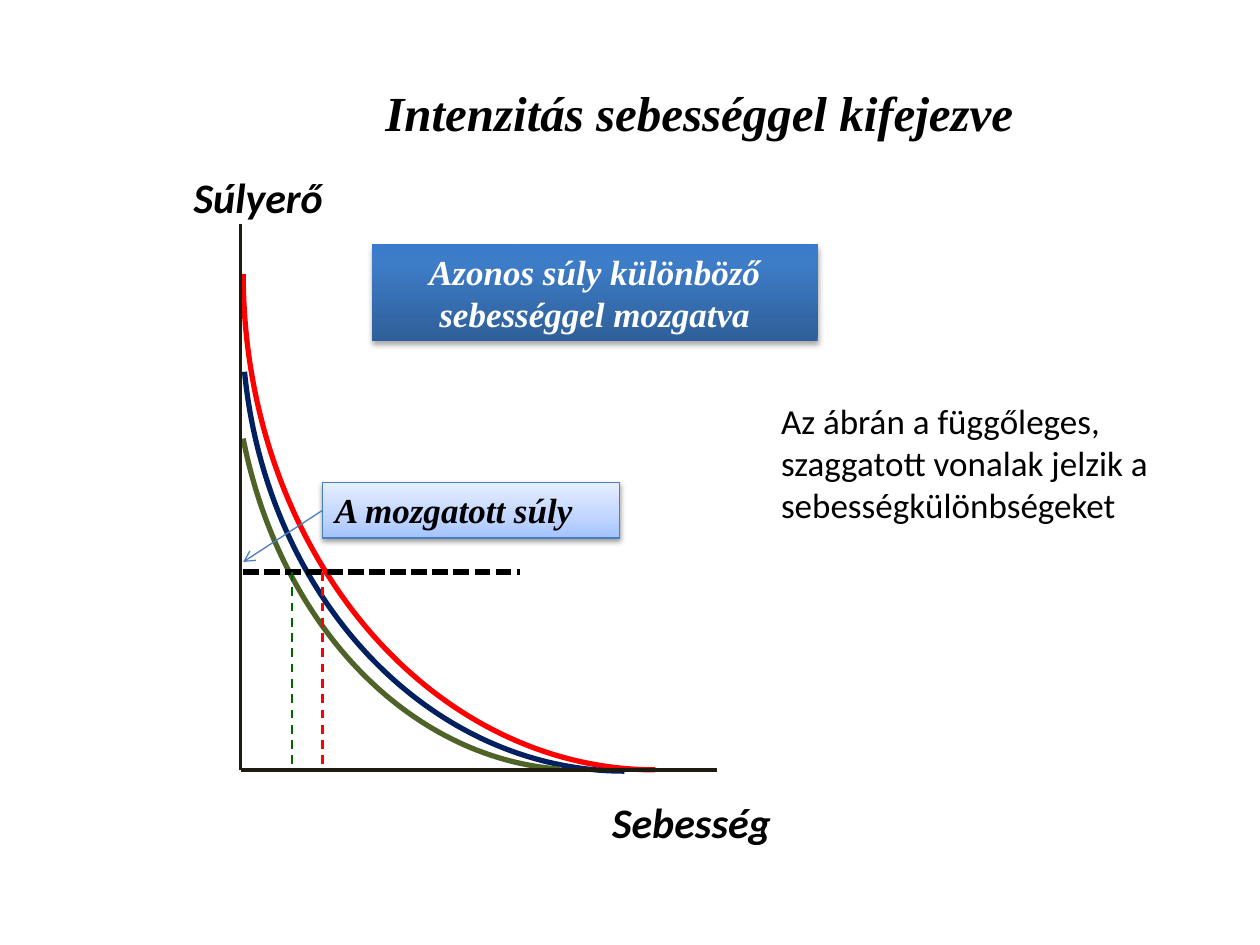
from pptx import Presentation
from pptx.dml.color import RGBColor
from pptx.enum.dml import MSO_LINE_DASH_STYLE as Dash
from pptx.enum.shapes import MSO_CONNECTOR as Connector, MSO_SHAPE as Preset
from pptx.enum.text import MSO_ANCHOR as Anchor, MSO_AUTO_SIZE as AutoSize, PP_ALIGN as Align
from pptx.oxml import parse_xml
from pptx.oxml.ns import nsdecls
from pptx.util import Inches, Pt

COLORS = {
    "black": "000000", "white": "FFFFFF", "red": "FF0000", "navy": "002060",
    "olive": "4F6228", "green": "006600", "axis": "1E1C11", "blue": "4B7EBC",
}
PALE_BLUE = [(0, "A4C4FF"), (35, "BFD4FF"), (100, "E6EEFF")]
DEEP_BLUE = [(0, "2F5F99"), (80, "3D7CC7"), (100, "3A7CCB")]
SERIF, SANS = "Times New Roman", "Calibri"
AXIS_LEFT, AXIS_BOTTOM, WEIGHT_LEVEL = 1.91, 6.11, 4.54


def drawing_xml(tag, content):
    return parse_xml(f'<a:{tag} {nsdecls("a")}{content}')


class SlideBuilder:
    def __init__(self, slide):
        self.slide = slide
        self.shapes = slide.shapes

    def stroke(self, shape, color, width, dash=None):
        shape.line.color.rgb = RGBColor.from_string(COLORS[color])
        shape.line.width = Pt(width)
        if dash:
            shape.line.dash_style = dash

    def set_text(self, shape, text, size, font=SANS, color="black", align=Align.LEFT, emphasis=True):
        frame = shape.text_frame
        frame.word_wrap = True
        frame.auto_size = AutoSize.NONE
        frame.text = text
        para = frame.paragraphs[0]
        para.alignment = align
        para.font.name = font
        para.font.size = Pt(size)
        para.font.bold = para.font.italic = emphasis
        para.font.color.rgb = RGBColor.from_string(COLORS[color])

    def title(self, text, place):
        title = self.shapes.title
        title.left, title.top, title.width, title.height = map(Inches, place)
        self.set_text(title, text, 28, SERIF, align=Align.CENTER)

    def text(self, text, place, size, **style):
        box = self.shapes.add_textbox(*map(Inches, place))
        self.set_text(box, text, size, **style)

    def arc(self, place, color, angles):
        arc = self.shapes.add_shape(Preset.ARC, *map(Inches, place))
        arc.rotation = 180
        arc.adjustments[0], arc.adjustments[1] = angles
        arc.fill.background()
        arc.shadow.inherit = False
        self.stroke(arc, color, 3)

    def line(self, start, end, color, width, dash=None, arrow=False):
        line = self.shapes.add_connector(Connector.STRAIGHT, *map(Inches, start + end))
        self.stroke(line, color, width, dash)
        properties = line._element.spPr
        if arrow:
            properties.get_or_add_ln().append(drawing_xml("tailEnd", ' type="arrow"/>'))
        properties.append(drawing_xml("effectLst", "/>"))
        return line

    def gradient_box(self, text, place, stops, shadow, outline=None, **style):
        box = self.shapes.add_shape(Preset.RECTANGLE, *map(Inches, place))
        if outline:
            self.stroke(box, outline, 0.75)
        else:
            box.line.fill.background()
        stop_list = "".join(
            f'<a:gs pos="{position * 1000}"><a:srgbClr val="{color}"/></a:gs>'
            for position, color in stops
        )
        properties = box._element.spPr
        properties.insert(2, drawing_xml(
            "gradFill", f'><a:gsLst>{stop_list}</a:gsLst><a:lin ang="16200000" scaled="0"/></a:gradFill>'))
        opacity, distance = shadow
        properties.append(drawing_xml(
            "effectLst",
            f'><a:outerShdw blurRad="{int(Pt(3.1))}" dist="{int(Pt(distance))}" dir="5400000" rotWithShape="0">'
            f'<a:srgbClr val="{COLORS["black"]}"><a:alpha val="{opacity * 1000}"/></a:srgbClr>'
            '</a:outerShdw></a:effectLst>'))
        self.set_text(box, text, 20, SERIF, **style)
        box.text_frame.vertical_anchor = Anchor.TOP
        return box


def main():
    deck = Presentation()
    deck.slide_width, deck.slide_height = Inches(10), Inches(7.5)
    page = SlideBuilder(deck.slides.add_slide(deck.slide_layouts[5]))

    page.title("Intenzitás sebességgel kifejezve", (2.32, 0.6, 6.46, 0.57))

    page.arc((1.93, -1.76, 6.54, 7.87), "red", (162, 0))
    page.arc((1.92, -1.04, 6.07, 7.16), "navy", (162, 211.35))
    page.arc((1.85, -0.8, 5.51, 6.91), "olive", (163.6, 205.71))

    origin = (AXIS_LEFT, AXIS_BOTTOM)
    axes = [page.line((AXIS_LEFT, 1.78), origin, "axis", 2),
            page.line(origin, (5.69, AXIS_BOTTOM), "axis", 2)]
    page.shapes.add_group_shape(axes)
    page.text("Sebesség", (4.76, 6.27, 1.57, 0.5), 24)
    page.text("Súlyerő", (1.38, 1.31, 1.34, 0.5), 24, align=Align.CENTER)

    page.line((1.93, WEIGHT_LEVEL), (4.13, WEIGHT_LEVEL), "black", 3, Dash.SQUARE_DOT)
    weight = page.gradient_box("A mozgatott súly", (2.56, 3.83, 2.36, 0.44),
                               PALE_BLUE, (38, 1.6), outline="blue")
    for speed, color in ((2.56, "red"), (2.32, "green")):
        page.line((speed, WEIGHT_LEVEL), (speed, AXIS_BOTTOM), color, 1.25, Dash.DASH)
    page.gradient_box("Azonos súly különböző sebességgel mozgatva", (2.95, 1.94, 3.54, 0.77),
                      DEEP_BLUE, (35, 1.8), color="white", align=Align.CENTER)
    pointer = page.line((2.56, 4.05), (1.93, 4.46), "blue", 0.75, arrow=True)
    pointer.begin_connect(weight, 1)

    page.text("Az ábrán a függőleges, szaggatott vonalak jelzik a sebességkülönbségeket",
              (6.1, 3.12, 3.39, 1.11), 20, emphasis=False)

    deck.save("out.pptx")


if __name__ == "__main__":
    main()
